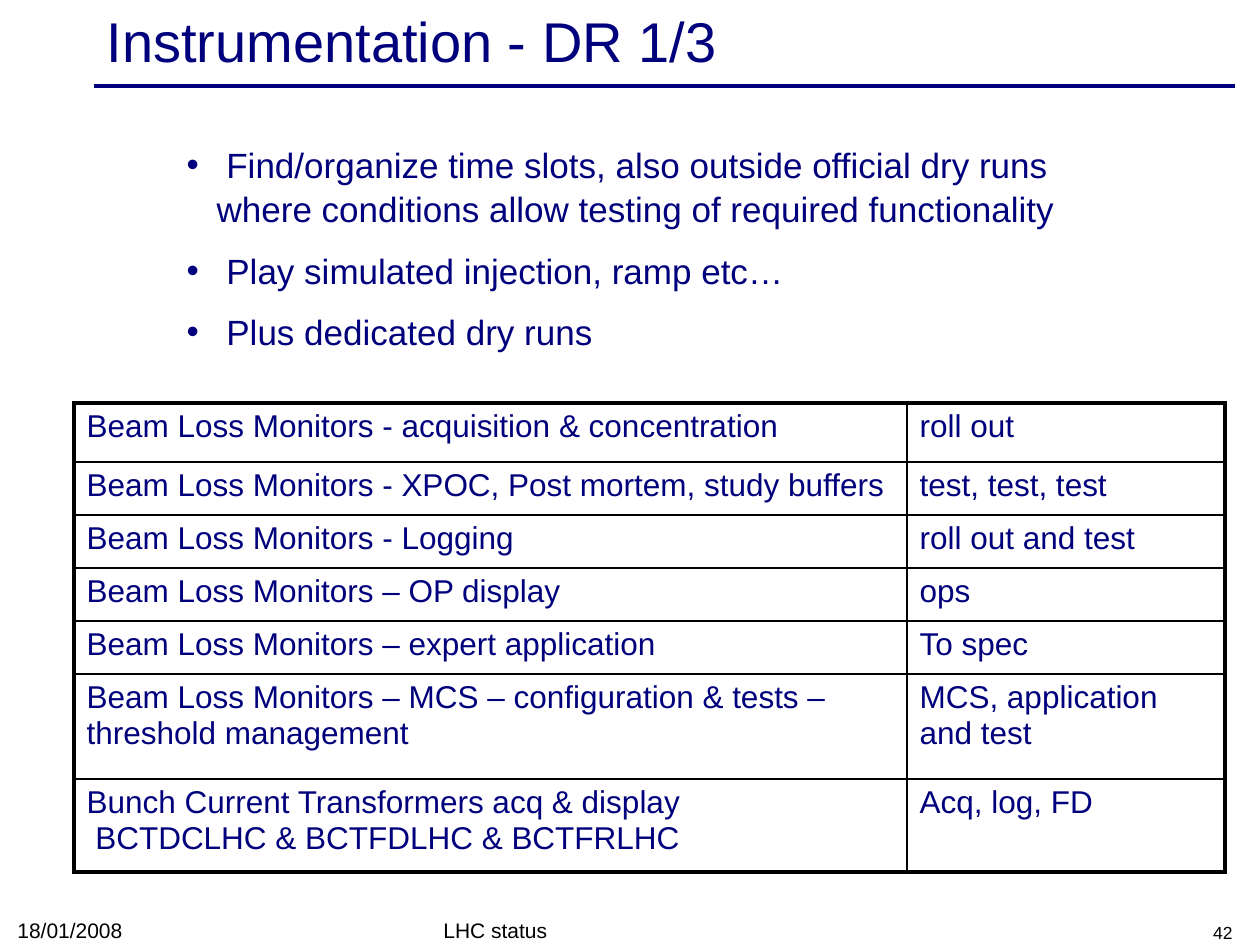
from typing import NamedTuple

import pptx
import pptx.dml.color
import pptx.enum.shapes
import pptx.enum.text
import pptx.oxml.ns
import pptx.util
from lxml import etree

ALIGN = pptx.enum.text.PP_ALIGN
ANCHOR = pptx.enum.text.MSO_ANCHOR
PX_PER_INCH = 126
NAVY, BLACK, WHITE = "00007D", "000000", "FFFFFF"
THICK, THIN = 2.25, 1


class Box(NamedTuple):
    left: int
    top: int
    width: int
    height: int


class Footer(NamedTuple):
    text: str
    box: Box
    size: int
    align: ALIGN


def emu(px: int) -> int:
    return round(px * 914400 / PX_PER_INCH)


def rgb(value: str) -> pptx.dml.color.RGBColor:
    return pptx.dml.color.RGBColor.from_string(value)


def format_text(paragraph, size: int, color: str, **paragraph_format) -> None:
    for name, value in paragraph_format.items():
        setattr(paragraph, name, value)
    font_format = {"name": "Arial", "size": pptx.util.Pt(size)}
    for name, value in font_format.items():
        setattr(paragraph.font, name, value)
    paragraph.font.color.rgb = rgb(color)


def set_frame(shape, box: Box, anchor: ANCHOR) -> None:
    for name, value in box._asdict().items():
        setattr(shape, name, emu(value))
    frame_format = {
        "word_wrap": True,
        "auto_size": pptx.enum.text.MSO_AUTO_SIZE.NONE,
        "vertical_anchor": anchor,
    }
    for name, value in frame_format.items():
        setattr(shape.text_frame, name, value)


def set_border(cell, side: str, width: float) -> None:
    qn = pptx.oxml.ns.qn
    line = etree.Element(qn(f"a:{side}"), w=str(pptx.util.Pt(width)))
    fill = etree.SubElement(line, qn("a:solidFill"))
    etree.SubElement(fill, qn("a:srgbClr"), val=BLACK)
    cell._tc.get_or_add_tcPr().append(line)


def add_footer(slide, footer: Footer) -> None:
    shape = slide.shapes.add_textbox(0, 0, 0, 0)
    set_frame(shape, footer.box, ANCHOR.BOTTOM)
    shape.text_frame.text = footer.text
    format_text(shape.text_frame.paragraphs[0], footer.size, BLACK,
                alignment=footer.align)


def add_status_table(slide, left: int, top: int, columns: list[int],
                     heights: list[int], rows: list[tuple[str, str]]) -> None:
    table = slide.shapes.add_table(
        len(rows), len(columns), emu(left), emu(top),
        emu(sum(columns)), emu(sum(heights))).table
    table.first_row = table.horz_banding = False
    for column, width in zip(table.columns, columns):
        column.width = emu(width)
    last_row, last_column = len(rows) - 1, len(columns) - 1
    for r, texts in enumerate(rows):
        table.rows[r].height = emu(heights[r])
        for c, text in enumerate(texts):
            cell = table.cell(r, c)
            cell.text = text
            format_text(cell.text_frame.paragraphs[0], 18, NAVY)
            # Outer edges are thick, inner ones thin
            outer = {"lnL": c == 0, "lnR": c == last_column,
                     "lnT": r == 0, "lnB": r == last_row}
            for side, is_outer in outer.items():
                set_border(cell, side, THICK if is_outer else THIN)
            cell.fill.solid()
            cell.fill.fore_color.rgb = rgb(WHITE)


BULLETS = [
    " Find/organize time slots, also outside official dry runs where "
    "conditions allow testing of required functionality",
    " Play simulated injection, ramp etc…",
    " Plus dedicated dry runs",
]
SYSTEMS = [
    ("Beam Loss Monitors - acquisition & concentration", "roll out"),
    ("Beam Loss Monitors - XPOC, Post mortem, study buffers",
     "test, test, test"),
    ("Beam Loss Monitors - Logging", "roll out and test"),
    ("Beam Loss Monitors – OP display", "ops"),
    ("Beam Loss Monitors – expert application", "To spec"),
    ("Beam Loss Monitors – MCS – configuration & tests –"
     "threshold management", "MCS, application and test"),
    ("Bunch Current Transformers acq & display\v"
     " BCTDCLHC & BCTFDLHC & BCTFRLHC", "Acq, log, FD"),
]
FOOTERS = [
    Footer("18/01/2008", Box(5, 912, 294, 37), 12, ALIGN.LEFT),
    Footer("LHC status", Box(431, 913, 399, 36), 12, ALIGN.LEFT),
    Footer("42", Box(951, 913, 294, 36), 10, ALIGN.RIGHT),
]


def main() -> None:
    deck = pptx.Presentation()
    deck.slide_width, deck.slide_height = emu(1260), emu(945)
    slide = deck.slides.add_slide(deck.slide_layouts[1])

    # Title and the rule under it
    title = slide.shapes.title
    set_frame(title, Box(94, 4, 1134, 72), ANCHOR.MIDDLE)
    title.text_frame.text = "Instrumentation - DR 1/3"
    format_text(title.text_frame.paragraphs[0], 32, NAVY, alignment=ALIGN.LEFT)
    rule = slide.shapes.add_connector(
        pptx.enum.shapes.MSO_CONNECTOR.STRAIGHT,
        emu(94), emu(86), emu(1235), emu(86))
    rule.line.color.rgb = rgb(NAVY)
    rule.line.width = pptx.util.Pt(2)
    etree.SubElement(rule._element.spPr, pptx.oxml.ns.qn("a:effectLst"))

    # Bulleted plan
    plan = slide.placeholders[1]
    set_frame(plan, Box(174, 135, 942, 223), ANCHOR.TOP)
    plan.text_frame.text = "\n".join(BULLETS)
    for i, paragraph in enumerate(plan.text_frame.paragraphs):
        properties = paragraph._p.get_or_add_pPr()
        properties.set("marL", str(emu(30)))
        properties.set("indent", str(-emu(30)))
        format_text(paragraph, 20, NAVY, line_spacing=1.05,
                    space_before=pptx.util.Pt(10 if i else 0))

    # Systems and their status
    add_status_table(slide, 74, 403, [833, 318],
                     [59, 53, 53, 53, 53, 105, 93], SYSTEMS)

    for footer in FOOTERS:
        add_footer(slide, footer)
    deck.save("out.pptx")


if __name__ == "__main__":
    main()
